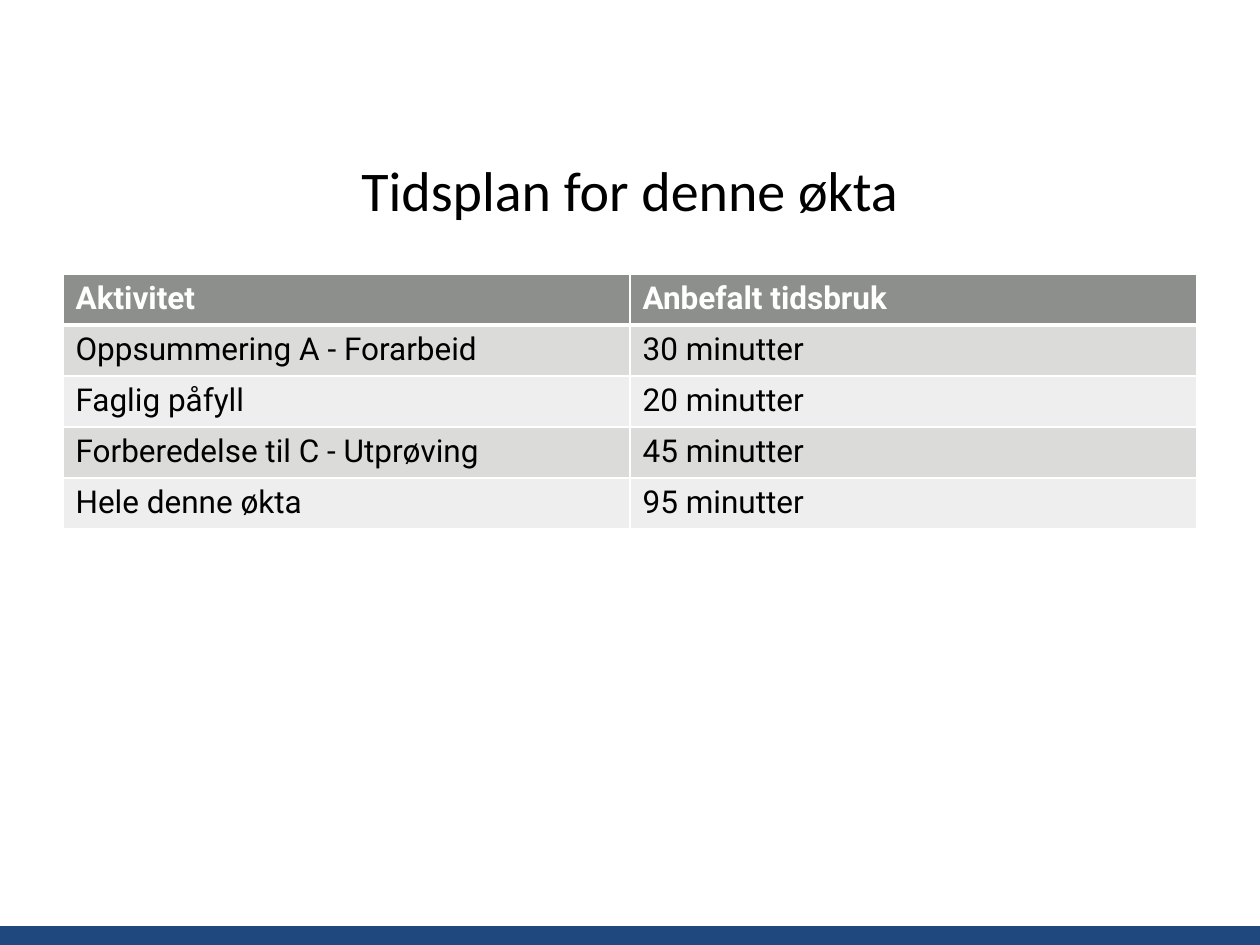
from dataclasses import dataclass

from lxml import etree
from pptx import Presentation
from pptx import util as u
from pptx.dml.color import RGBColor
from pptx.enum import shapes, text
from pptx.oxml.ns import qn


@dataclass(frozen=True)
class Theme:
    ink: str = "000000"
    paper: str = "FFFFFF"
    footer: str = "1F487E"
    header: str = "8D8F8C"
    bands: tuple = ("DBDBDA", "EEEEEE")
    title_font: str = "Calibri"
    table_font: str = "Roboto"
    title_size: int = 32
    table_size: int = 18
    rule: int = 1
    header_rule: int = 3


class SlideBuilder:
    """Places elements by shares of the slide's width and height."""

    def __init__(self, deck, theme):
        self.deck = deck
        self.theme = theme
        self.slide = deck.slides.add_slide(deck.slide_layouts[6])

    def area(self, left, top, width, height):
        w, h = self.deck.slide_width, self.deck.slide_height
        return [round(v) for v in (left * w, top * h, width * w, height * h)]

    def run(self, paragraph, words, font, size, color, bold=False):
        run = paragraph.add_run()
        run.text = words
        run.font.name = font
        run.font.size = u.Pt(size)
        run.font.bold = bold
        run.font.color.rgb = RGBColor.from_string(color)

    def band(self, share, color):
        band = self.slide.shapes.add_shape(
            shapes.MSO_SHAPE.RECTANGLE, *self.area(*share))
        band.shadow.inherit = False
        band.fill.solid()
        band.fill.fore_color.rgb = RGBColor.from_string(color)
        band.line.fill.background()

    def title(self, share, words):
        frame = self.slide.shapes.add_textbox(*self.area(*share)).text_frame
        frame.word_wrap = True
        frame.vertical_anchor = text.MSO_ANCHOR.MIDDLE
        heading = frame.paragraphs[0]
        heading.alignment = text.PP_ALIGN.CENTER
        self.run(heading, words, self.theme.title_font,
                 self.theme.title_size, self.theme.ink)

    def borders(self, cell, **widths):
        properties = cell._tc.get_or_add_tcPr()
        for place, side in enumerate("LRTB"):
            width = u.Pt(widths.get(side, self.theme.rule))
            line = etree.Element(qn(f"a:ln{side}"), w=str(width))
            fill = etree.SubElement(line, qn("a:solidFill"))
            etree.SubElement(fill, qn("a:srgbClr"), val=self.theme.paper)
            properties.insert(place, line)

    def table(self, share, rows):
        theme = self.theme
        area = self.area(*share)
        table = self.slide.shapes.add_table(len(rows), len(rows[0]), *area).table
        for r, entries in enumerate(rows):
            is_header = r == 0
            fill = theme.header if is_header else theme.bands[(r - 1) % 2]
            color = theme.paper if is_header else theme.ink
            for c, words in enumerate(entries):
                cell = table.cell(r, c)
                cell.fill.solid()
                cell.fill.fore_color.rgb = RGBColor.from_string(fill)
                # The thick rule is shared by the header and the first row
                self.borders(cell,
                             T=theme.header_rule if r == 1 else theme.rule,
                             B=theme.header_rule if is_header else theme.rule)
                self.run(cell.text_frame.paragraphs[0], words,
                         theme.table_font, theme.table_size, color, is_header)


def main():
    deck = Presentation()
    deck.slide_width, deck.slide_height = u.Inches(10), u.Inches(7.5)
    theme = Theme()
    schedule = SlideBuilder(deck, theme)

    # Footer band
    schedule.band((0, 0.98, 1, 0.02), theme.footer)

    # Title
    schedule.title((0.05, 0.13, 0.9, 0.14), "Tidsplan for denne økta")

    # Activities and recommended time
    schedule.table((0.05, 0.29, 0.9, 0.27), [
        ("Aktivitet", "Anbefalt tidsbruk"),
        ("Oppsummering A - Forarbeid", "30 minutter"),
        ("Faglig påfyll", "20 minutter"),
        ("Forberedelse til C - Utprøving", "45 minutter"),
        ("Hele denne økta", "95 minutter"),
    ])

    deck.save("out.pptx")


if __name__ == "__main__":
    main()
